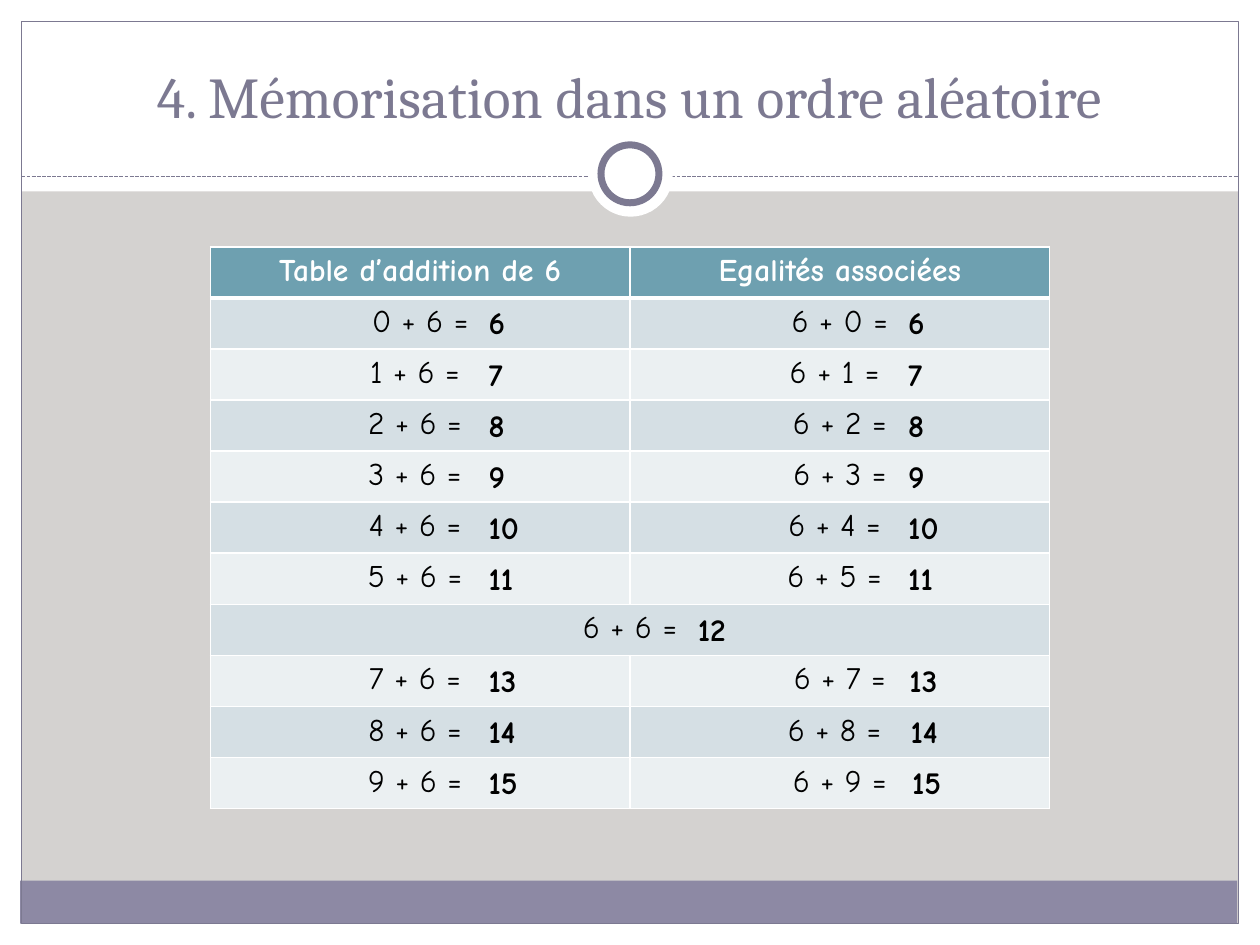
from dataclasses import dataclass

from lxml.etree import SubElement
from pptx import Presentation
from pptx.dml.color import RGBColor
from pptx.enum.dml import MSO_LINE
from pptx.enum.shapes import MSO_CONNECTOR, MSO_SHAPE
from pptx.enum.text import MSO_ANCHOR, MSO_AUTO_SIZE, PP_ALIGN
from pptx.oxml.ns import qn
from pptx.util import Inches, Pt

WHITE, BLACK, PURPLE = "FFFFFF", "000000", "7C7991"
HEADER_FILL = "6EA0B0"
ROW_FILLS = ("EBF0F2", "D5DFE4")
ADDEND = 6
ROW_COUNT = 11
TABLE_LEFT, TABLE_TOP, COLUMN_WIDTH = 1.67, 1.96, 3.33
ROW_HEIGHT = 4.46 / ROW_COUNT
HEADINGS = ("Table d’addition de 6", "Egalités associées")
SPACED_RIGHT = (1, 4, 5, 8)


@dataclass(frozen=True)
class Panel:
    left: float
    top: float
    width: float
    height: float
    fill: str | None = WHITE
    line: str | None = None
    weight: float = 0.75
    outline: MSO_SHAPE = MSO_SHAPE.RECTANGLE


FRAME = (
    Panel(0, 7.33, 10, 0.17),
    Panel(0, 0, 10, 1.52),
    Panel(0, 0, 0.17, 7.5),
    Panel(9.83, 0, 0.17, 7.5),
    Panel(0.16, 6.99, 9.66, 0.34, fill="8D89A4"),
    Panel(0.17, 0.17, 9.66, 7.16, fill=None, line=PURPLE),
)
MEDALLION = (
    Panel(4.67, 1.05, 0.67, 0.67, outline=MSO_SHAPE.OVAL),
    Panel(4.77, 1.15, 0.46, 0.46, line=PURPLE, weight=4, outline=MSO_SHAPE.OVAL),
)


def rgb(value: str) -> RGBColor:
    return RGBColor.from_string(value)


def write(frame, text: str, *, size: float = 18, font: str = "Comic Neue",
          color: str = BLACK, bold: bool = False, align=PP_ALIGN.LEFT) -> None:
    paragraph = frame.paragraphs[0]
    paragraph.alignment = align
    run = paragraph.add_run()
    run.text = text
    run.font.size = Pt(size)
    run.font.name = font
    run.font.bold = bold
    run.font.color.rgb = rgb(color)


def draw_panel(slide, panel: Panel) -> None:
    shape = slide.shapes.add_shape(
        panel.outline, Inches(panel.left), Inches(panel.top),
        Inches(panel.width), Inches(panel.height))
    shape.shadow.inherit = False
    if panel.fill:
        shape.fill.solid()
        shape.fill.fore_color.rgb = rgb(panel.fill)
    else:
        shape.fill.background()
    if panel.line:
        shape.line.color.rgb = rgb(panel.line)
        shape.line.width = Pt(panel.weight)
    else:
        shape.line.fill.background()


def draw_divider(slide) -> None:
    divider = slide.shapes.add_connector(
        MSO_CONNECTOR.STRAIGHT, Inches(0.17), Inches(1.4), Inches(9.83), Inches(1.4))
    divider.line.color.rgb = rgb(PURPLE)
    divider.line.width = Pt(0.75)
    divider.line.dash_style = MSO_LINE.SQUARE_DOT
    properties = divider.line._get_or_add_ln().getparent()
    SubElement(properties, qn("a:effectLst"))


def draw_title(slide) -> None:
    title = slide.shapes.add_textbox(Inches(0.33), Inches(0.25), Inches(9.33), Inches(0.83))
    title.text_frame.word_wrap = True
    title.text_frame.vertical_anchor = MSO_ANCHOR.BOTTOM
    write(title.text_frame, "4. Mémorisation dans un ordre aléatoire",
          size=33, font="Cambria", color=PURPLE, align=PP_ALIGN.CENTER)


def style_cell(cell, fill: str, top: float, bottom: float) -> None:
    properties = cell._tc.get_or_add_tcPr()
    for side, weight in {"lnL": 1, "lnR": 1, "lnT": top, "lnB": bottom}.items():
        border = SubElement(properties, qn(f"a:{side}"), w=str(Pt(weight)))
        SubElement(SubElement(border, qn("a:solidFill")), qn("a:srgbClr"), val=WHITE)
    cell.fill.solid()
    cell.fill.fore_color.rgb = rgb(fill)


def equations(number: int) -> tuple[str, str]:
    left_end = " " if number not in (0, ADDEND) else ""
    right_end = " " if number in SPACED_RIGHT else ""
    return f"{number} + {ADDEND} ={left_end}", f"{ADDEND} + {number} ={right_end}"


def draw_sums(slide) -> None:
    sums = slide.shapes.add_table(
        ROW_COUNT, 2, Inches(TABLE_LEFT), Inches(TABLE_TOP),
        Inches(2 * COLUMN_WIDTH), Inches(ROW_COUNT * ROW_HEIGHT)).table
    for row in sums.rows:
        row.height = Inches(ROW_HEIGHT)
    for row in range(ROW_COUNT):
        header = row == 0
        texts = HEADINGS if header else equations(row - 1)
        for column, text in enumerate(texts):
            cell = sums.cell(row, column)
            style_cell(cell, HEADER_FILL if header else ROW_FILLS[row % 2],
                       top=3 if row == 1 else 1, bottom=3 if header else 1)
            if row - 1 == ADDEND and column == 1:
                continue
            write(cell.text_frame, text, color=WHITE if header else BLACK,
                  bold=header, align=PP_ALIGN.CENTER)
    double_row = ADDEND + 1
    sums.cell(double_row, 0).merge(sums.cell(double_row, 1))


def draw_answer(slide, number: int, left: float) -> None:
    text = str(number + ADDEND)
    answer = slide.shapes.add_textbox(
        Inches(left), Inches(2.36 + number * ROW_HEIGHT),
        Inches(0.23 + 0.12 * len(text)), Inches(0.4))
    answer.text_frame.word_wrap = False
    answer.text_frame.auto_size = MSO_AUTO_SIZE.SHAPE_TO_FIT_TEXT
    write(answer.text_frame, text, bold=True)


def main() -> None:
    deck = Presentation()
    deck.slide_width, deck.slide_height = Inches(10), Inches(7.5)
    slide = deck.slides.add_slide(deck.slide_layouts[6])
    slide.background.fill.solid()
    slide.background.fill.fore_color.rgb = rgb("D4D2D0")
    for panel in FRAME:
        draw_panel(slide, panel)
    draw_divider(slide)
    for panel in MEDALLION:
        draw_panel(slide, panel)
    draw_title(slide)
    draw_sums(slide)
    for number in range(ROW_COUNT - 1):
        drift = 0.01 * max(0, number - ADDEND)
        lefts = (5.44,) if number == ADDEND else (3.78, 7.11 + drift)
        for left in lefts:
            draw_answer(slide, number, left)
    deck.save("out.pptx")


if __name__ == "__main__":
    main()
